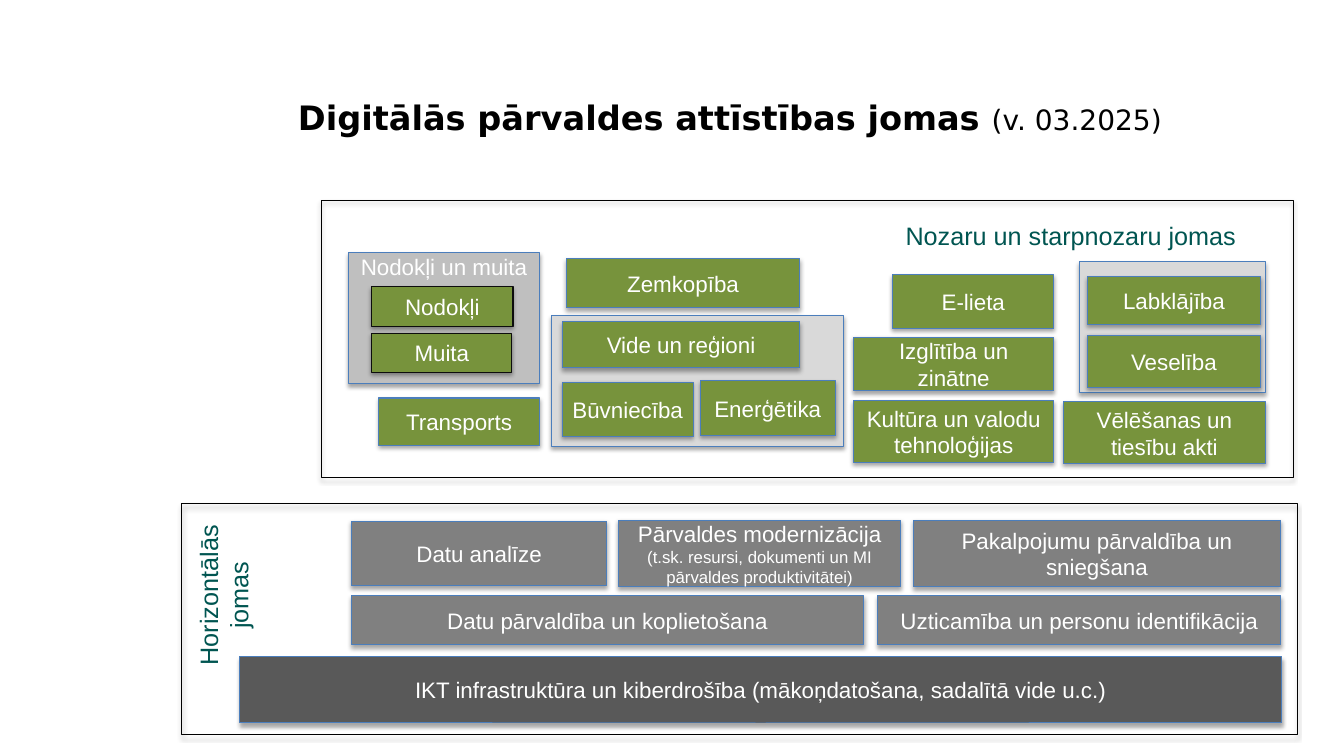
from dataclasses import dataclass
from lxml.etree import SubElement
from pptx import Presentation
from pptx.dml.color import RGBColor as RGB
from pptx.enum.shapes import MSO_SHAPE as SHAPE
from pptx.enum.text import MSO_ANCHOR as ANCHOR, PP_ALIGN as ALIGN
from pptx.oxml.ns import qn
from pptx.util import Cm, Pt


@dataclass(frozen=True)
class Theme:
    black: str = "000000"
    white: str = "FFFFFF"
    teal: str = "005551"
    green: str = "77933C"
    gray: str = "808080"
    dark: str = "595959"
    silver: str = "BFBFBF"
    pale: str = "D9D9D9"
    edge: str = "4B7EBC"
    ink: str = "0D0D0D"
    body: str = "Arial"
    head: str = "DejaVu Sans"
    title: int = 24
    version: int = 20
    label: int = 18
    text: int = 16
    note: int = 12
    line: float = 0.75


T = Theme()


def place(box, left, top, wide, high):
    """Turn a place inside a box into a place on the slide, in cm."""
    return box[0] + left, box[1] + top, wide, high


def write(para, text, size, color, font=T.body, bold=False):
    run = para.add_run()
    run.text = text
    run.font.size = Pt(size)
    run.font.name = font
    run.font.bold = bold
    run.font.color.rgb = RGB.from_string(color)


def shade(shape):
    """Add the soft shadow that falls straight down."""
    effects = SubElement(shape._element.spPr, qn("a:effectLst"))
    outer = SubElement(effects, qn("a:outerShdw"), blurRad=str(Pt(3.1)),
                       dist=str(Pt(1.8)), dir="5400000", rotWithShape="0")
    color = SubElement(outer, qn("a:srgbClr"), val=T.black)
    SubElement(color, qn("a:alpha"), val="35000")


def block(slide, box, fill=None, edge=T.edge, text="", note=""):
    shape = slide.shapes.add_shape(SHAPE.RECTANGLE, *map(Cm, box))
    if fill:
        shape.fill.solid()
        shape.fill.fore_color.rgb = RGB.from_string(fill)
    else:
        shape.fill.background()
    shape.line.color.rgb = RGB.from_string(edge)
    shape.line.width = Pt(T.line)
    shade(shape)
    frame = shape.text_frame
    frame.word_wrap = True
    frame.vertical_anchor = ANCHOR.MIDDLE
    para = frame.paragraphs[0]
    para.alignment = ALIGN.CENTER
    if text:
        write(para, text, T.text, T.white)
    if note:
        write(para, note, T.note, T.white)
    return shape


def textbox(slide, box, align, anchor=ANCHOR.TOP):
    shape = slide.shapes.add_textbox(*map(Cm, box))
    frame = shape.text_frame
    frame.word_wrap = True
    frame.vertical_anchor = anchor
    frame.paragraphs[0].alignment = align
    return shape, frame.paragraphs[0]


def heading(slide, box):
    _, para = textbox(slide, box, ALIGN.LEFT, ANCHOR.MIDDLE)
    write(para, "Digitālās pārvaldes attīstības jomas ", T.title, T.black,
          T.head, True)
    write(para, "(v. 03.2025)", T.version, T.black, T.head)


def cluster(slide, box, fill, areas, edge=T.edge, text=""):
    """Draw a backing block with its areas on top."""
    back = block(slide, box, fill, text=text)
    back.text_frame.vertical_anchor = ANCHOR.TOP
    back.text_frame.margin_top = 0
    for name, *spot in areas:
        block(slide, place(box, *spot), T.green, edge, name)


def sectors(slide, box):
    block(slide, box, edge=T.black)
    _, para = textbox(slide, place(box, 13.67, 0.38, 9.63, 1.02), ALIGN.RIGHT)
    write(para, "Nozaru un starpnozaru jomas", T.label, T.teal)
    areas = [
        ("Zemkopība", 6.17, 1.47, 5.89, 1.24),
        ("Transports", 1.45, 4.98, 4.04, 1.19),
        ("E-lieta", 14.4, 1.88, 4.06, 1.35),
        ("Izglītība un zinātne", 13.41, 3.45, 5.05, 1.35),
        ("Kultūra un valodu tehnoloģijas", 13.41, 5.05, 5.05, 1.55),
        ("Vēlēšanas un tiesību akti", 18.69, 5.08, 5.11, 1.55),
    ]
    for name, *spot in areas:
        block(slide, place(box, *spot), T.green, text=name)
    cluster(slide, place(box, 0.69, 1.32, 4.8, 3.3), T.silver, [
        ("Nodokļi", 0.58, 0.86, 3.56, 0.99),
        ("Muita", 0.58, 2.03, 3.53, 0.99),
    ], T.ink, "Nodokļi un muita")
    cluster(slide, place(box, 5.79, 2.9, 7.37, 3.3), T.pale, [
        ("Vide un reģioni", 0.28, 0.15, 5.99, 1.17),
        ("Būvniecība", 0.28, 1.68, 3.3, 1.37),
        ("Enerģētika", 3.76, 1.65, 3.4, 1.37),
    ])
    cluster(slide, place(box, 19.1, 1.55, 4.7, 3.3), T.pale, [
        ("Labklājība", 0.2, 0.38, 4.37, 1.19),
        ("Veselība", 0.2, 1.85, 4.37, 1.32),
    ])


def common(slide, box):
    """Draw the horizontal areas that serve every sector."""
    block(slide, box, edge=T.black)
    label, para = textbox(slide, place(box, -1.7, 1.4, 5.54, 1.8),
                          ALIGN.CENTER)
    label.rotation = 270
    write(para, "Horizontālās jomas", T.label, T.teal)
    areas = [
        ("Datu analīze", "", 4.29, 0.43, 6.43, 1.63),
        ("Pārvaldes modernizācija ",
         "(t.sk. resursi, dokumenti un MI pārvaldes produktivitātei)",
         11.02, 0.41, 7.11, 1.68),
        ("Pakalpojumu pārvaldība un sniegšana", "", 18.44, 0.41, 9.27, 1.68),
        ("Datu pārvaldība un koplietošana", "", 4.29, 2.31, 12.9, 1.24),
        ("Uzticamība un personu identifikācija", "", 17.55, 2.31, 10.16, 1.24),
    ]
    for name, note, *spot in areas:
        block(slide, place(box, *spot), T.gray, text=name, note=note)
    block(slide, place(box, 1.47, 3.84, 26.26, 1.68), T.dark, text=(
        "IKT infrastruktūra un kiberdrošība "
        "(mākoņdatošana, sadalītā vide u.c.)"))


def main():
    deck = Presentation()
    deck.slide_width, deck.slide_height = Cm(33.87), Cm(19.05)
    slide = deck.slides.add_slide(deck.slide_layouts[6])
    heading(slide, (7.26, 1.52, 23.83, 2.87))
    sectors(slide, (8.1, 5.05, 24.49, 6.99))
    common(slide, (4.57, 12.7, 28.12, 5.82))
    deck.save("out.pptx")


if __name__ == "__main__":
    main()
